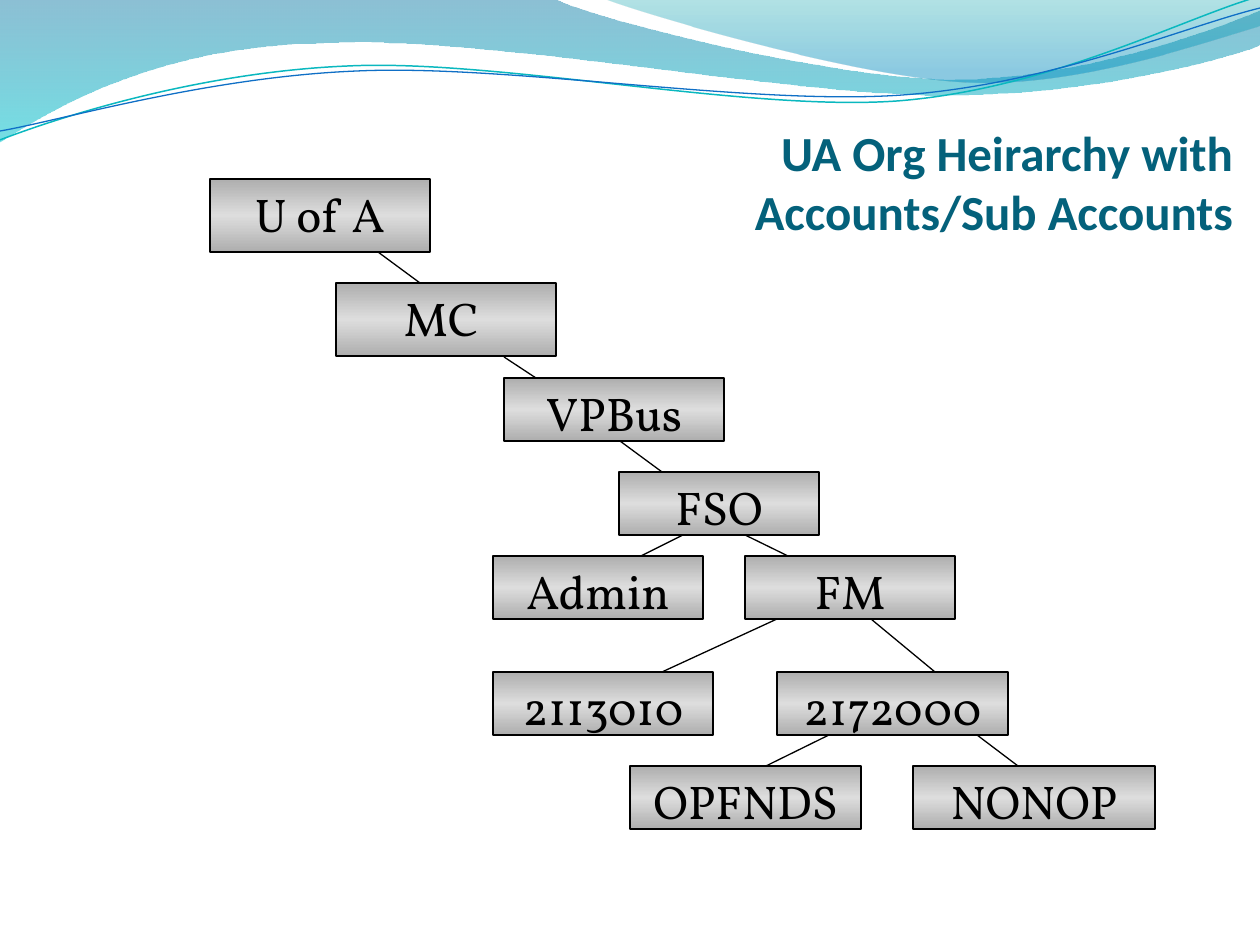
import math

import pptx
import pptx.dml.color
import pptx.enum.shapes
import pptx.enum.text
import pptx.oxml
import pptx.oxml.ns
import pptx.util

RGB = pptx.dml.color.RGBColor
BLACK = RGB(0x00, 0x00, 0x00)
SILVER = RGB(0xDD, 0xDD, 0xDD)
TITLE_TEAL = RGB(0x04, 0x61, 0x7B)
DEEP_BLUE = RGB(0x00, 0x74, 0xA1)
AQUA = RGB(0x00, 0xC6, 0xCF)
SEA_GREEN = RGB(0x00, 0xA1, 0xA9)
SKY_BLUE = RGB(0x00, 0x8B, 0xBF)
LINE_TEAL = RGB(0x0A, 0xB8, 0xBF)
LINE_BLUE = RGB(0x0F, 0x6F, 0xC6)

SCALE = 914400 / 126
WAVE_TILT = 2.7
WAVE_CENTER = (629, 73)
NSDECL = pptx.oxml.ns.nsdecls("a")

SHADED = '<a:gamma/><a:shade val="78800"/><a:invGamma/>'
OPACITY_30 = '<a:alpha val="30000"/>'
OPACITY_45 = '<a:alpha val="45000"/>'
OPACITY_55 = '<a:alpha val="55000"/>'
BOX_STOPS = [(0, SILVER, SHADED), (50, SILVER, ""), (100, SILVER, SHADED)]

BANDS = [
    ((0, 0),
     [(554, -1), (600, 21, 837, 79, 955, 79), (1075, 79, 1207, 33, 1260, 11),
      (1261, 45), (1239, 55, 1096, 96, 940, 95), (784, 95, 481, 35, 324, 43),
      (163, 45, 58, 105, -1, 142), (0, 0)],
     [(0, DEEP_BLUE, OPACITY_45), (100, AQUA, OPACITY_55)]),
    ((604, -1),
     [(641, 14, 859, 78, 969, 82), (1079, 87, 1211, 40, 1260, 26),
      (1260, 0), (604, -1)],
     [(0, SEA_GREEN, OPACITY_30), (80, SKY_BLUE, OPACITY_45)]),
]

WAVES = [
    ((0, 140),
     [(60, 117, 199, 72, 349, 66), (498, 59, 747, 112, 898, 101),
      (1049, 89, 1182, 19, 1257, -3)],
     LINE_TEAL, 0.85),
    ((0, 131),
     [(59, 121, 207, 77, 357, 71), (508, 64, 751, 106, 903, 95),
      (1053, 84, 1186, 26, 1260, 8)],
     LINE_BLUE, 0.75),
]

ORG_BOXES = [
    ("VPBus", 504, 378, 220, 63),
    ("MC ", 336, 283, 220, 73),
    ("U of A", 210, 179, 220, 73),
    ("FSO", 619, 472, 200, 63),
    ("FM", 745, 556, 210, 63),
    ("Admin", 493, 556, 210, 63),
    ("2172000", 777, 672, 231, 63),
    ("2113010", 493, 672, 220, 63),
    ("OPFNDS", 630, 766, 231, 63),
    ("NONOP", 913, 766, 242, 63),
]

LINKS = [
    (378, 252, 420, 283),
    (504, 357, 536, 378),
    (620, 441, 662, 472),
    (745, 535, 788, 556),
    (683, 535, 641, 556),
    (777, 619, 662, 672),
    (871, 619, 935, 672),
    (977, 735, 1018, 766),
    (829, 735, 766, 766),
]


def px(n):
    return pptx.util.Emu(round(n * SCALE))


def set_gradient(sp, stops):
    sp.fill.gradient()
    sp.fill.gradient_angle = 270
    gs_list = sp._element.spPr.find(".//" + pptx.oxml.ns.qn("a:gsLst"))
    for gs in list(gs_list):
        gs_list.remove(gs)
    for position, color, effect in stops:
        gs_list.append(pptx.oxml.parse_xml(
            f'<a:gs {NSDECL} pos="{position * 1000}">'
            f'<a:srgbClr val="{color}">{effect}</a:srgbClr></a:gs>'))


def set_line(sp, color, width):
    sp.line.color.rgb = color
    sp.line.width = pptx.util.Pt(width)


def turn(x, y, degrees):
    cx, cy = WAVE_CENTER
    cos, sin = math.cos(math.radians(degrees)), math.sin(math.radians(degrees))
    dx, dy = x - cx, y - cy
    return cx + dx * cos - dy * sin, cy + dx * sin + dy * cos


def add_outline(s, start, segments, close, tilt=0):
    points = [start]
    for segment in segments:
        points += zip(segment[::2], segment[1::2])
    points = [tuple(px(n) for n in turn(x, y, tilt)) for x, y in points]
    builder = s.shapes.build_freeform(*points[0])
    builder.add_line_segments(points[1:], close=close)
    sp = builder.convert_to_shape()
    sp.shadow.inherit = False
    sp.rotation = -tilt % 360
    bend_curves(sp, segments)
    return sp


def bend_curves(sp, segments):
    steps = iter(sp._element.findall(".//" + pptx.oxml.ns.qn("a:lnTo")))
    for segment in segments:
        parts = [next(steps) for _ in segment[::2]]
        if len(parts) == 3:
            curve = pptx.oxml.parse_xml(f"<a:cubicBezTo {NSDECL}/>")
            parts[0].addprevious(curve)
            for part in parts:
                curve.append(part[0])
                part.getparent().remove(part)


def add_band(s, start, segments, stops):
    sp = add_outline(s, start, segments, True)
    set_gradient(sp, stops)
    sp.line.fill.background()


def add_wave(s, start, segments, color, width):
    sp = add_outline(s, start, segments, False, WAVE_TILT)
    sp.fill.background()
    set_line(sp, color, width)


def format_title(s, text):
    sp = s.shapes.title
    s.shapes._spTree.append(sp._element)
    sp.left, sp.top, sp.width, sp.height = px(581), px(84), px(652), px(156)
    tf = sp.text_frame
    tf.text = text
    tf.word_wrap = True
    tf.auto_size = pptx.enum.text.MSO_AUTO_SIZE.NONE
    tf.vertical_anchor = pptx.enum.text.MSO_ANCHOR.BOTTOM
    tf.margin_left = tf.margin_right = tf.margin_bottom = 0
    p = tf.paragraphs[0]
    p.alignment = pptx.enum.text.PP_ALIGN.RIGHT
    p.font.name = "Calibri"
    p.font.size = pptx.util.Pt(28)
    p.font.bold = True
    p.font.color.rgb = TITLE_TEAL


def add_org_box(s, label, x, y, w, h):
    sp = s.shapes.add_shape(pptx.enum.shapes.MSO_SHAPE.RECTANGLE,
                            px(x), px(y), px(w), px(h))
    sp.shadow.inherit = False
    set_gradient(sp, BOX_STOPS)
    set_line(sp, BLACK, 0.75)
    tf = sp.text_frame
    tf.text = label
    tf.word_wrap = True
    tf.vertical_anchor = pptx.enum.text.MSO_ANCHOR.TOP
    p = tf.paragraphs[0]
    p.alignment = pptx.enum.text.PP_ALIGN.CENTER
    p.font.name = "Vollkorn"
    p.font.size = pptx.util.Pt(27)
    p.font.color.rgb = BLACK


def add_link(s, x1, y1, x2, y2):
    link = s.shapes.add_connector(pptx.enum.shapes.MSO_CONNECTOR.STRAIGHT,
                                  px(x1), px(y1), px(x2), px(y2))
    set_line(link, BLACK, 0.75)
    link._element.spPr.append(pptx.oxml.parse_xml(f"<a:effectLst {NSDECL}/>"))


def main():
    prs = pptx.Presentation()
    prs.slide_width, prs.slide_height = px(1260), px(945)
    s = prs.slides.add_slide(prs.slide_layouts[5])
    for band in BANDS:
        add_band(s, *band)
    for wave in WAVES:
        add_wave(s, *wave)
    format_title(s, "UA Org Heirarchy with Accounts/Sub Accounts")
    for box in ORG_BOXES:
        add_org_box(s, *box)
    for link in LINKS:
        add_link(s, *link)
    prs.save("out.pptx")


if __name__ == "__main__":
    main()
